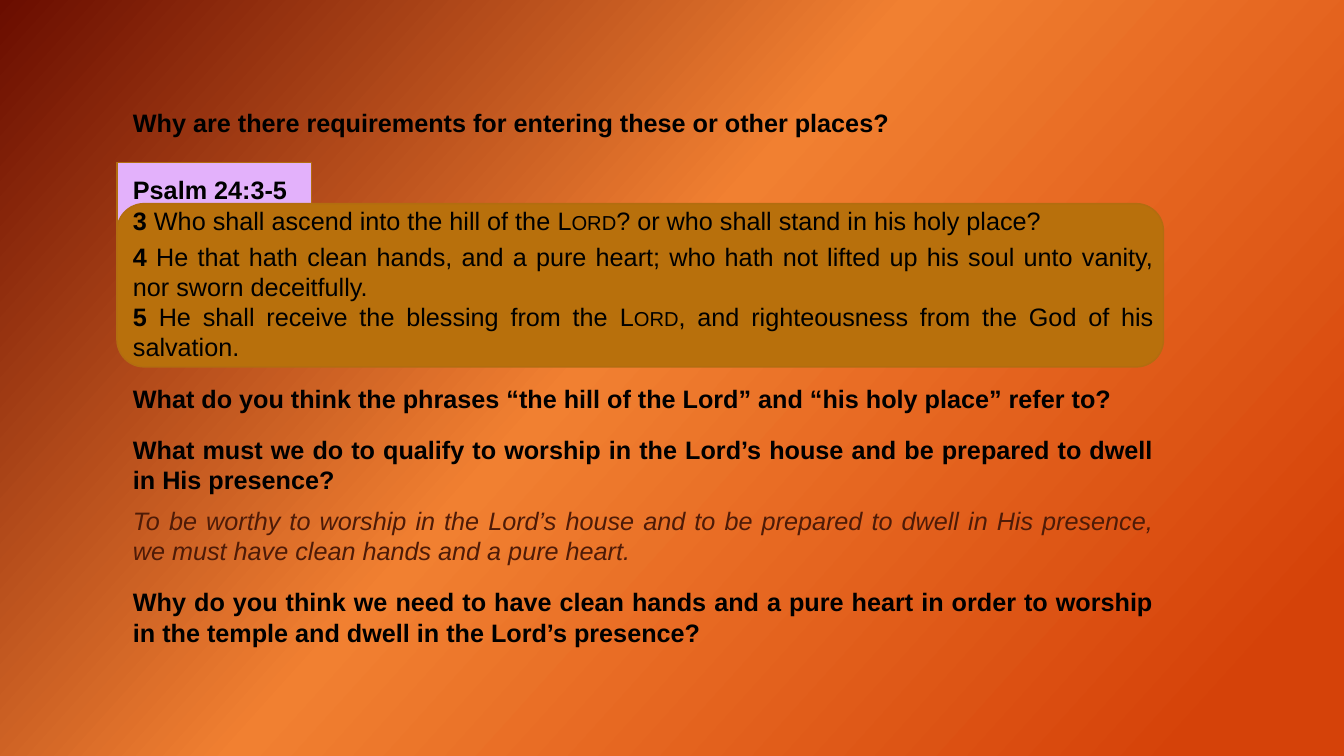
from copy import deepcopy
from pptx import Presentation
from pptx.dml.color import RGBColor
from pptx.enum import shapes, text
from pptx.util import Inches, Pt

THEME = {
    "font": "Arial", "size": Pt(18), "line": Pt(1),
    "ink": "000000", "answer": "4E1B07",
    "edge": "B26D10", "tab": "E3B1FB", "verse": "B8700C",
    "back": [(0, "6A0D00"), (0.45, "F18031"), (0.92, "D54209")],
}
# Run formats: "cap" is set in XML, the rest on the font
BOLD = {"bold": True}
PLAIN = {"bold": False}
SMALL = {"bold": False, "cap": "small"}
ANSWER = {"italic": True, "color": THEME["answer"]}

LEFT, WIDE = 1.22, 10.32


def rgb(name):
    return RGBColor.from_string(name)


def write(box, paras, align):
    frame = box.text_frame
    for num, runs in enumerate(paras):
        para = frame.paragraphs[0] if num == 0 else frame.add_paragraph()
        para.alignment = align
        for words, form in runs:
            run = para.add_run()
            run.text = words
            run.font.color.rgb = rgb(form.get("color", THEME["ink"]))
            look = {"name": THEME["font"], "size": THEME["size"], **form}
            for key, val in look.items():
                if key == "cap":
                    run._r.get_or_add_rPr().set("cap", val)
                elif key != "color":
                    setattr(run.font, key, val)


deck = Presentation()
deck.slide_width, deck.slide_height = Inches(13.33), Inches(7.5)
slide = deck.slides.add_slide(deck.slide_layouts[6])

# Background gradient with three stops
fill = slide.background.fill
fill.gradient()
fill.gradient_angle = 360 - 42
stops = slide.element.xpath(".//a:gsLst")[0]
stops.append(deepcopy(stops[0]))
for stop, (pos, tone) in zip(fill.gradient_stops, THEME["back"]):
    stop.position = pos
    stop.color.rgb = rgb(tone)

# Scripture panel with its tab behind
KIND = shapes.MSO_SHAPE
panels = [
    (KIND.RECTANGLE, 1.61, 1.93, 1.12, "tab"),
    (KIND.ROUNDED_RECTANGLE, 2.02, 10.38, 1.62, "verse"),
]
for kind, top, width, high, tone in panels:
    panel = slide.shapes.add_shape(
        kind, Inches(1.16), Inches(top), Inches(width), Inches(high))
    panel.shadow.inherit = False
    panel.fill.solid()
    panel.fill.fore_color.rgb = rgb(THEME[tone])
    panel.line.color.rgb = rgb(THEME["edge"])
    panel.line.width = THEME["line"]

# Questions, verses and answer: top, width, height, paragraphs
blocks = [
    (1.02, 8.09, 0.4, [[
        ("Why are there requirements for entering these or other places?", BOLD)]]),
    (1.68, 1.81, 0.4, [[("Psalm 24:3-5 ", BOLD)]]),
    (1.99, 9.78, 0.4, [[
        ("3 ", BOLD),
        ("Who shall ascend into the hill of the ", PLAIN),
        ("Lord", SMALL),
        ("? or who shall stand in his holy place?", PLAIN)]]),
    (2.34, WIDE, 1.31, [
        [("4 ", BOLD),
         ("He that hath clean hands, and a pure heart; who hath not lifted up "
          "his soul unto vanity, nor sworn deceitfully.", PLAIN)],
        [("5 ", BOLD),
         ("He shall receive the blessing from the ", PLAIN),
         ("Lord", SMALL),
         (", and righteousness from the God of his salvation.", PLAIN)]]),
    (3.75, WIDE, 0.4, [[
        ("What do you think the phrases “the hill of the Lord” and "
         "“his holy place” refer to? ", BOLD)]]),
    (4.26, WIDE, 0.71, [[
        ("What must we do to qualify to worship in the Lord’s house and be "
         "prepared to dwell in His presence?", BOLD)]]),
    (4.96, WIDE, 0.71, [[
        ("To be worthy to worship in the Lord’s house and to be prepared to "
         "dwell in His presence, we must have clean hands and a pure heart.",
         ANSWER)]]),
    (5.77, WIDE, 0.71, [[
        ("Why do you think we need to have clean hands and a pure heart in "
         "order to worship in the temple and dwell in the Lord’s presence?",
         BOLD)]]),
]
for top, width, high, paras in blocks:
    box = slide.shapes.add_textbox(
        Inches(LEFT), Inches(top), Inches(width), Inches(high))
    label = width < 2
    box.text_frame.word_wrap = not label
    box.text_frame.auto_size = text.MSO_AUTO_SIZE.SHAPE_TO_FIT_TEXT
    write(box, paras, text.PP_ALIGN.LEFT if label else text.PP_ALIGN.JUSTIFY)

deck.save("out.pptx")
